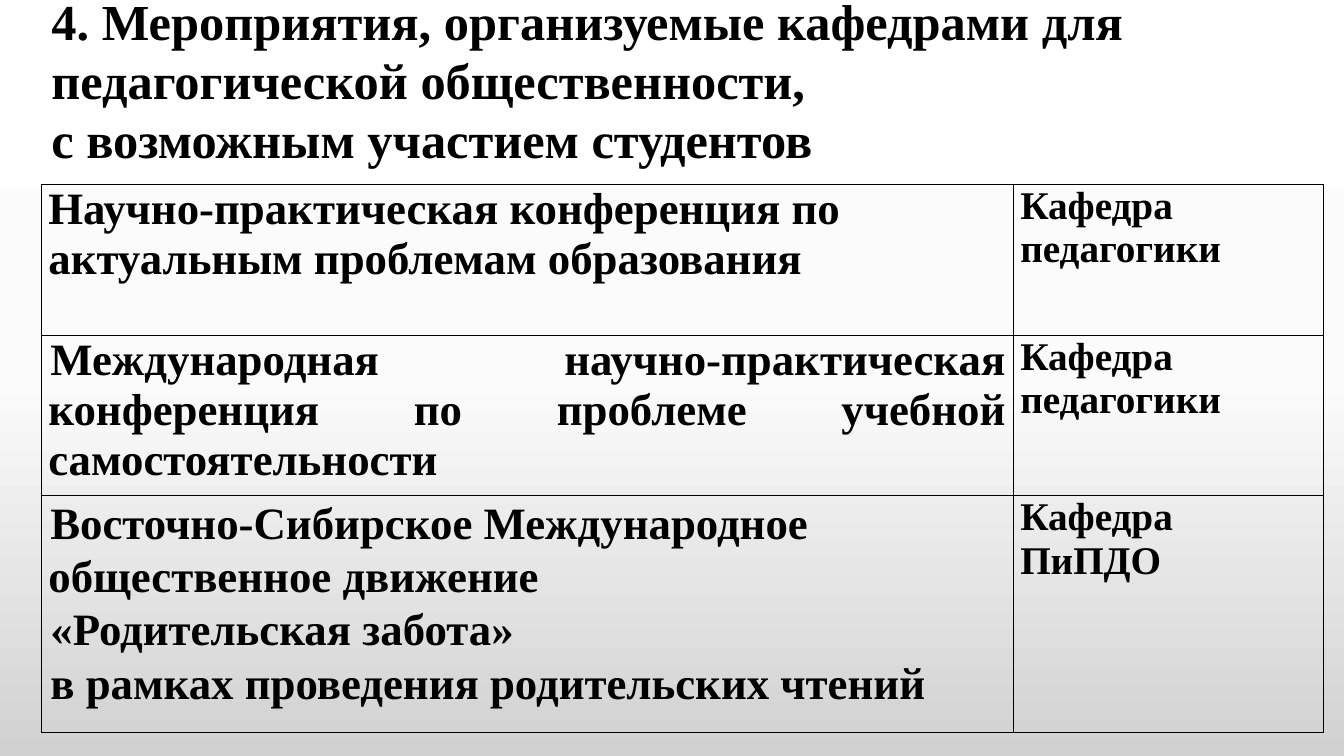
from lxml.etree import SubElement
from pptx import Presentation
from pptx.dml.color import RGBColor
from pptx.enum.text import MSO_ANCHOR, MSO_AUTO_SIZE, PP_ALIGN
from pptx.oxml.ns import qn
from pptx.util import Inches, Pt

COLORS = {"ink": "000000", "top": "FFFFFF", "middle": "FBFBFB", "bottom": "D1D1D1"}
FONT = "Times New Roman"
TITLE = ("4. Мероприятия, организуемые кафедрами для педагогической общественности,"
         "\vс возможным участием студентов")
COLUMN_WIDTHS = (9.64, 3.08)

# Row height, event paragraphs, event format, department
EVENTS = [
    (1.5, ["Научно-практическая конференция по актуальным проблемам образования"],
     {}, "Кафедра педагогики"),
    (1.59, ["Международная научно-практическая конференция по проблеме учебной "
            "самостоятельности"],
     {"align": PP_ALIGN.JUSTIFY, "indent": 0.02}, "Кафедра педагогики"),
    (2.35, ["Восточно-Сибирское Международное общественное движение",
            "«Родительская забота»",
            "в рамках проведения родительских чтений"],
     {"indent": 0.02, "spacing": 1.07}, "Кафедра ПиПДО"),
]


def write_paragraph(para, text, size, align=PP_ALIGN.LEFT, spacing=1.0, indent=0):
    para.text = text
    para.alignment = align
    para.line_spacing = spacing
    para.font.name = FONT
    para.font.size = Pt(size)
    para.font.bold = True
    para.font.color.rgb = RGBColor.from_string(COLORS["ink"])
    for span in para.runs:
        span.font.name = FONT
        span.font.size = Pt(size)
        span.font.bold = True
    if indent:
        properties = para._p.get_or_add_pPr()
        properties.set("marL", "0")
        properties.set("indent", str(Inches(indent)))


class EventSlide:
    def __init__(self, deck):
        self.page = deck.slides.add_slide(deck.slide_layouts[5])

    def background(self, stops):
        """Fill the page from top to bottom with (percent, colour name) stops."""
        fill = self.page.background.fill
        fill.gradient()
        fill.gradient_angle = 270
        stop_list = self.page.element.find(".//" + qn("a:gsLst"))
        for old_stop in list(stop_list):
            stop_list.remove(old_stop)
        for percent, name in stops:
            stop = SubElement(stop_list, qn("a:gs"), pos=str(percent * 1000))
            SubElement(stop, qn("a:srgbClr"), val=COLORS[name])

    def title(self, text, left, top, width, height):
        box = self.page.shapes.title
        box.left, box.top = Inches(left), Inches(top)
        box.width, box.height = Inches(width), Inches(height)
        frame = box.text_frame
        frame.word_wrap = True
        frame.auto_size = MSO_AUTO_SIZE.NONE
        frame.vertical_anchor = MSO_ANCHOR.TOP
        frame.margin_top = frame.margin_bottom = 0
        write_paragraph(frame.paragraphs[0], text, 36, spacing=0.98)

    def cell(self, cell, lines, size, **style):
        cell.margin_left = cell.margin_right = Inches(0.07)
        cell.margin_top = cell.margin_bottom = 0
        cell.vertical_anchor = MSO_ANCHOR.TOP
        frame = cell.text_frame
        for number, line in enumerate(lines):
            para = frame.add_paragraph() if number else frame.paragraphs[0]
            write_paragraph(para, line, size, **style)
        properties = cell._tc.get_or_add_tcPr()
        for side in ("lnL", "lnR", "lnT", "lnB"):
            border = SubElement(properties, qn("a:" + side), w=str(Pt(1)))
            solid = SubElement(border, qn("a:solidFill"))
            SubElement(solid, qn("a:srgbClr"), val=COLORS["ink"])
        cell.fill.background()

    def event_table(self, events, left, top):
        height = sum(event[0] for event in events)
        table = self.page.shapes.add_table(
            len(events), len(COLUMN_WIDTHS), Inches(left), Inches(top),
            Inches(sum(COLUMN_WIDTHS)), Inches(height)).table
        table.first_row = table.horz_banding = False
        for column, width in zip(table.columns, COLUMN_WIDTHS):
            column.width = Inches(width)
        for row, (row_height, lines, style, department) in zip(table.rows, events):
            row.height = Inches(row_height)
            self.cell(row.cells[0], lines, 32, **style)
            self.cell(row.cells[1], [department], 28, align=PP_ALIGN.JUSTIFY)


def main():
    deck = Presentation()
    deck.slide_width, deck.slide_height = Inches(13.33), Inches(7.5)
    slide = EventSlide(deck)
    slide.background([(0, "top"), (50, "middle"), (100, "bottom")])
    slide.title(TITLE, 0.41, -0.07, 12.51, 1.62)
    slide.event_table(EVENTS, 0.41, 1.83)
    deck.save("out.pptx")


if __name__ == "__main__":
    main()
